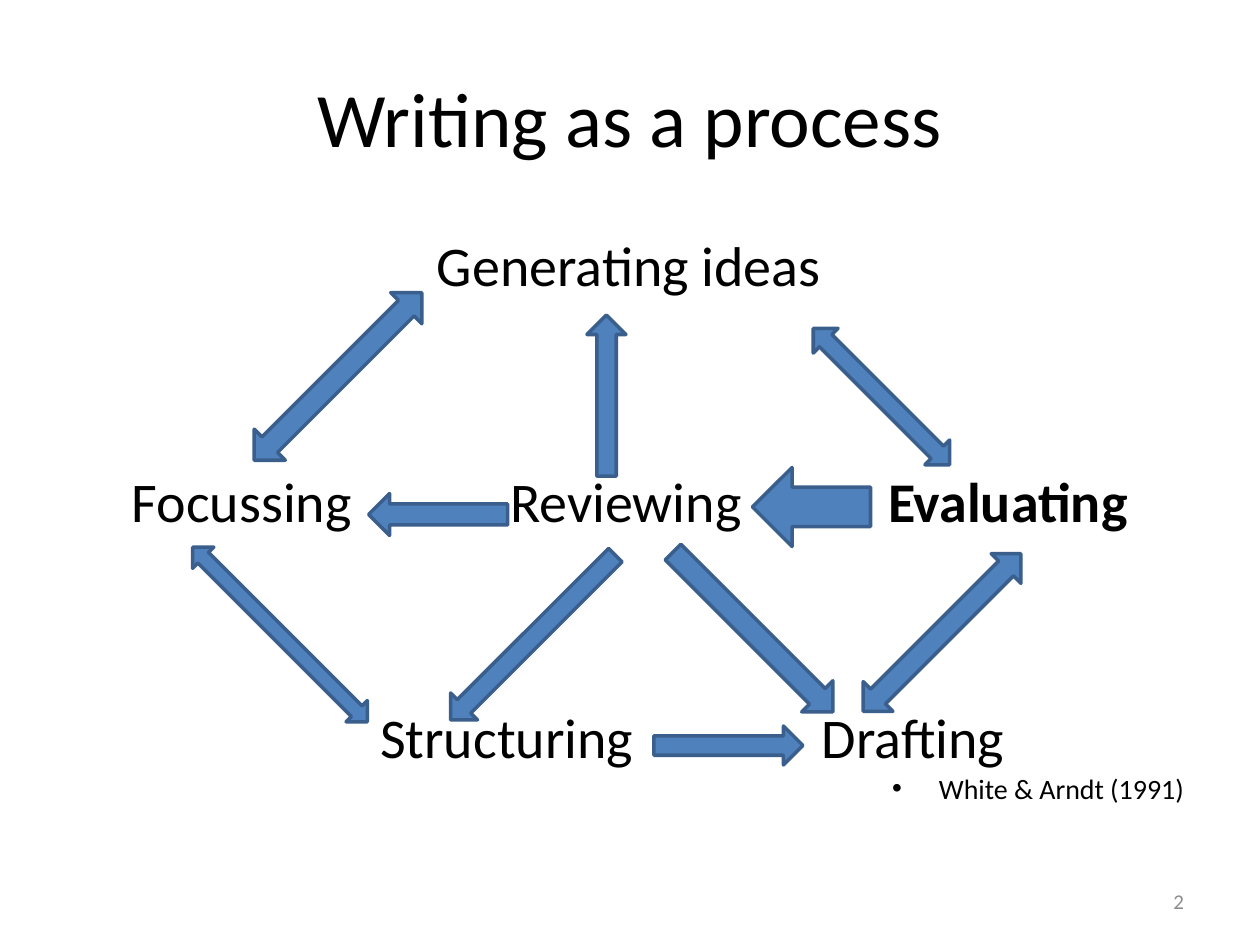
import pptx
import pptx.dml.color
import pptx.enum.shapes
import pptx.enum.text
import pptx.oxml.ns
import pptx.util
from lxml import etree

PIXEL = pptx.util.Inches(1) / 126
ALIGN = pptx.enum.text.PP_ALIGN
ARROW = pptx.enum.shapes.MSO_SHAPE
ROW_PITCH = 236
LABEL_HEIGHT = 68

LABELS = [
    ("Generating ideas", 566, 0, False),
    ("Focussing", 179, 1, False),
    ("Reviewing", 563, 1, False),
    ("Evaluating", 945, 1, True),
    ("Structuring", 444, 2, False),
    ("Drafting", 850, 2, False),
]
ARROWS = [
    (ARROW.DOWN_ARROW, 709, 227, 79, 118, 90),
    (ARROW.DOWN_ARROW, 668, 298, 44, 226, 315),
    (ARROW.DOWN_ARROW, 451, 300, 38, 233, 45),
    (ARROW.DOWN_ARROW, 354, 224, 42, 139, 90),
    (ARROW.DOWN_ARROW, 524, 94, 39, 161, 180),
    (ARROW.DOWN_ARROW, 646, 450, 39, 149, 270),
    (ARROW.UP_DOWN_ARROW, 801, 79, 35, 193, 315),
    (ARROW.UP_DOWN_ARROW, 858, 300, 42, 223, 45),
    (ARROW.UP_DOWN_ARROW, 253, 37, 44, 237, 45),
    (ARROW.UP_DOWN_ARROW, 202, 290, 30, 247, 315),
]


def px(*lengths):
    """Turn whole pixels into EMU."""
    return [pptx.util.Emu(round(length * PIXEL)) for length in lengths]


def color(value):
    """Turn a hex string into a colour."""
    return pptx.dml.color.RGBColor.from_string(value)


def add_text(slide, box, text, size, align=ALIGN.CENTER, bold=False, ink="000000"):
    """Add one line of text centred vertically in a box and return its paragraph."""
    frame = slide.shapes.add_textbox(*px(*box)).text_frame
    frame_format = {
        "word_wrap": True,
        "vertical_anchor": pptx.enum.text.MSO_ANCHOR.MIDDLE,
        "margin_left": 0,
        "margin_right": 0,
        "margin_top": 0,
        "margin_bottom": 0,
    }
    for name, value in frame_format.items():
        setattr(frame, name, value)
    paragraph = frame.paragraphs[0]
    paragraph.alignment = align
    run = paragraph.add_run()
    run.text = text
    font_format = {"name": "Calibri", "size": pptx.util.Pt(size), "bold": bold}
    for name, value in font_format.items():
        setattr(run.font, name, value)
    run.font.color.rgb = color(ink)
    return paragraph


def add_bullet(paragraph, indent):
    """Give a paragraph a round bullet with a hanging indent."""
    properties = paragraph._p.get_or_add_pPr()
    hanging = px(indent)[0]
    properties.set("marL", str(hanging))
    properties.set("indent", str(-hanging))
    namespace = pptx.oxml.ns.qn
    etree.SubElement(properties, namespace("a:buFont")).set("typeface", "Arial")
    etree.SubElement(properties, namespace("a:buChar")).set("char", "•")


def add_arrow(slide, kind, box, rotation):
    """Add a rotated block arrow."""
    shape = slide.shapes.add_shape(kind, *px(*box))
    shape.rotation = rotation
    shape.shadow.inherit = False
    shape.fill.solid()
    shape.fill.fore_color.rgb = color("4F81BD")
    shape.line.color.rgb = color("3A5F8C")
    shape.line.width = pptx.util.Pt(2)


def add_process(slide, left, top):
    """Place the stages of writing and the arrows between them."""
    for text, center, row, bold in LABELS:
        width = 440 if row == 0 else 280
        box = (left + center - width // 2, top + 9 + row * ROW_PITCH, width, LABEL_HEIGHT)
        add_text(slide, box, text, 32, bold=bold)
    for kind, x, y, width, height, rotation in ARROWS:
        add_arrow(slide, kind, (left + x, top + y, width, height), rotation)


def add_citation(slide, left, top, width, height):
    """Place the bulleted source at the right of its box."""
    paragraph = add_text(slide, (left, top, width, height), "White & Arndt (1991)", 16, ALIGN.RIGHT)
    add_bullet(paragraph, 47)


def build_slide(presentation):
    """Lay out the title, process, citation and page number."""
    slide = presentation.slides.add_slide(presentation.slide_layouts[6])
    add_text(slide, (63, 38, 1134, 157), "Writing as a process", 44)
    add_process(slide, 63, 221)
    add_citation(slide, 800, 771, 384, 34)
    add_text(slide, (903, 876, 281, 50), "2", 12, ALIGN.RIGHT, ink="8C8C8C")


def main():
    """Build and save the presentation."""
    presentation = pptx.Presentation()
    presentation.slide_width, presentation.slide_height = px(1260, 945)
    build_slide(presentation)
    presentation.save("out.pptx")


if __name__ == "__main__":
    main()
